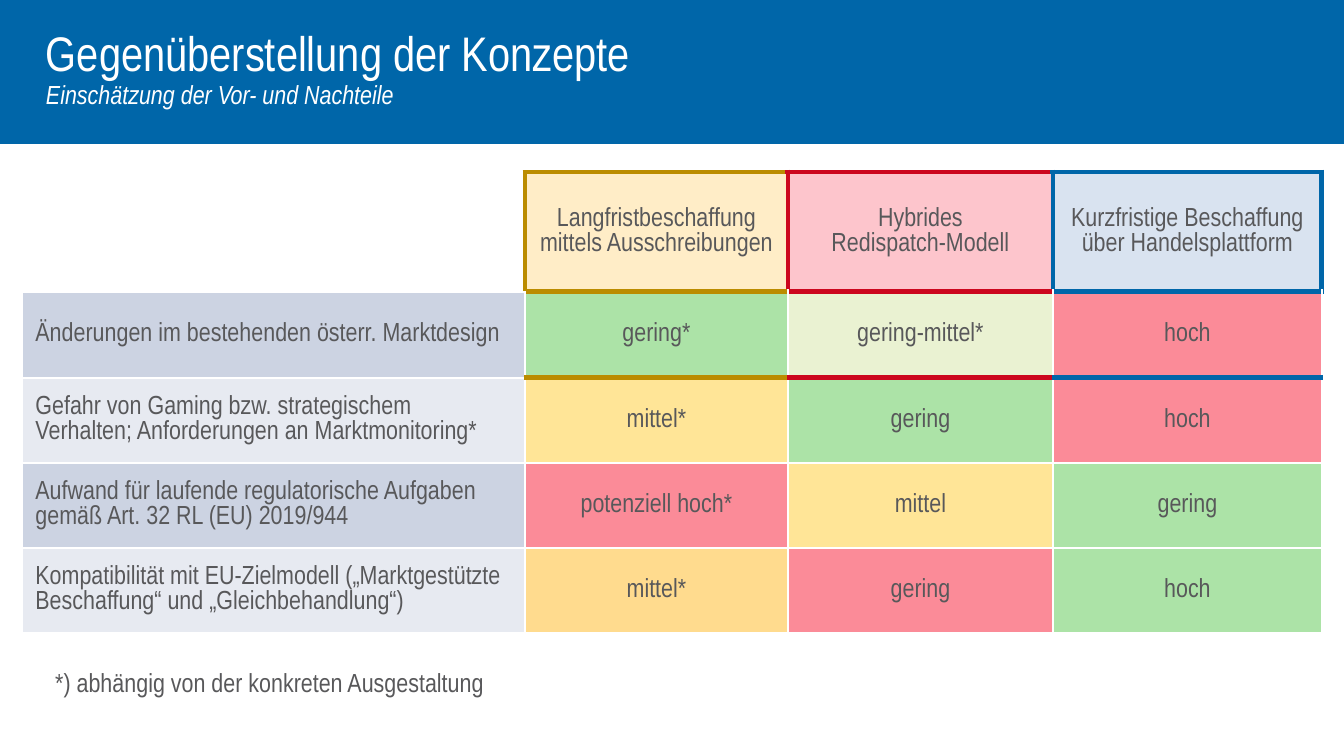
from lxml.etree import SubElement
from pptx import Presentation
from pptx.dml.color import RGBColor
from pptx.enum.shapes import MSO_SHAPE as Shape
from pptx.enum.text import MSO_ANCHOR as Anchor, MSO_AUTO_SIZE as AutoSize, PP_ALIGN as Align
from pptx.oxml.ns import qn
from pptx.util import Emu, Pt

TITLE = "Gegenüberstellung der Konzepte"
SUBTITLE = "Einschätzung der Vor- und Nachteile"
FOOTNOTE = "*) abhängig von der konkreten Ausgestaltung"
COLORS = {
    "white": "FFFFFF", "blue": "0066A9", "text": "58585A",
    "gold": "BB8C00", "crimson": "CC071E",
    "cream": "FFEDC7", "pink": "FDC5CC", "sky": "D9E3F0",
    "dark band": "CCD3E2", "light band": "E7EAF1",
    "green": "ACE3A7", "lime": "EAF2D2", "yellow": "FFE597",
    "orange": "FFDB8E", "red": "FB8B98",
}
ACCENTS = ["white", "gold", "crimson", "blue"]
RATINGS = [
    [("", "white"), ("Langfristbeschaffung mittels Ausschreibungen", "cream"),
     ("Hybrides\vRedispatch-Modell", "pink"),
     ("Kurzfristige Beschaffung über Handelsplattform", "sky")],
    [("Änderungen im bestehenden österr. Marktdesign", "dark band"),
     ("gering*", "green"), ("gering-mittel*", "lime"), ("hoch", "red")],
    [("Gefahr von Gaming bzw. strategischem Verhalten; Anforderungen an Marktmonitoring*",
      "light band"),
     ("mittel*", "yellow"), ("gering", "green"), ("hoch", "red")],
    [("Aufwand für laufende regulatorische Aufgaben\vgemäß Art. 32 RL (EU) 2019/944", "dark band"),
     ("potenziell hoch*", "red"), ("mittel", "yellow"), ("gering", "green")],
    [("Kompatibilität mit EU-Zielmodell („Marktgestützte Beschaffung“ und „Gleichbehandlung“)",
      "light band"),
     ("mittel*", "orange"), ("gering", "red"), ("hoch", "green")],
]
COLUMN_WIDTHS = [503, 263, 265, 269]
ROW_HEIGHTS = [120, 86, 85, 85, 85]
BODY = {"name": "Arial Narrow", "size": Pt(14)}


def px(length):
    return Emu(round(length * 914400 / 134.4))


def box(*lengths):
    return [px(length) for length in lengths]


def rgb(color):
    return RGBColor.from_string(COLORS[color])


def format_run(run, color, **changes):
    for key, value in {**BODY, **changes}.items():
        setattr(run.font, key, value)
    run.font.color.rgb = rgb(color)


def add_border(cell, side, color):
    width = Pt(1 if color == "white" else 3)
    line = SubElement(cell._tc.get_or_add_tcPr(), qn(f"a:ln{side}"), w=str(width))
    SubElement(SubElement(line, qn("a:solidFill")), qn("a:srgbClr"), val=COLORS[color])


def border_colors(row, column):
    accent = ACCENTS[column]
    following = ACCENTS[min(column + 1, len(ACCENTS) - 1)]
    return {
        "L": accent if row == 0 else "white",
        "R": following if row == 0 else "white",
        "T": accent if row <= 2 else "white",
        "B": accent if row <= 1 else "white",
    }


prs = Presentation()
prs.slide_width, prs.slide_height = box(1344, 756)
slide = prs.slides.add_slide(prs.slide_layouts[6])

banner = slide.shapes.add_shape(Shape.RECTANGLE, *box(0, 0, 1344, 143))
banner.shadow.inherit = False
banner.fill.solid()
banner.fill.fore_color.rgb = banner.line.color.rgb = rgb("blue")
banner.line.width = Pt(1)

heading = slide.shapes.add_textbox(*box(46, 46, 978, 52)).text_frame
heading_format = {
    "word_wrap": True, "auto_size": AutoSize.NONE, "vertical_anchor": Anchor.MIDDLE,
    "margin_left": 0, "margin_top": 0, "margin_right": 0, "margin_bottom": px(5),
}
for key, value in heading_format.items():
    setattr(heading, key, value)
heading_line = heading.paragraphs[0]
heading_line.text = f"{TITLE}\v{SUBTITLE}"
heading_line.line_spacing = 0.9
title_run, subtitle_run = heading_line.runs
format_run(title_run, "white", size=Pt(26))
format_run(subtitle_run, "white", italic=True)

table = slide.shapes.add_table(
    len(RATINGS), len(COLUMN_WIDTHS),
    *box(22, 172, sum(COLUMN_WIDTHS), sum(ROW_HEIGHTS))).table
for column, width in zip(table.columns, COLUMN_WIDTHS):
    column.width = px(width)
for row, height in zip(table.rows, ROW_HEIGHTS):
    row.height = px(height)
for r, ratings in enumerate(RATINGS):
    for c, (label, fill) in enumerate(ratings):
        cell = table.cell(r, c)
        for side, color in border_colors(r, c).items():
            add_border(cell, side, color)
        cell.fill.solid()
        cell.fill.fore_color.rgb = rgb(fill)
        cell.vertical_anchor = Anchor.MIDDLE
        paragraph = cell.text_frame.paragraphs[0]
        paragraph.text = label
        paragraph.alignment = Align.CENTER if c else Align.LEFT
        for run in paragraph.runs:
            format_run(run, "text", bold=False)

footnote = slide.shapes.add_textbox(*box(0, 660, 1155, 46)).text_frame
footnote.word_wrap = True
footnote_line = footnote.paragraphs[0]
footnote_line.text = FOOTNOTE
footnote_line._p.get_or_add_pPr().set("marL", str(px(42)))
format_run(footnote_line.runs[0], "text")

prs.save("out.pptx")
